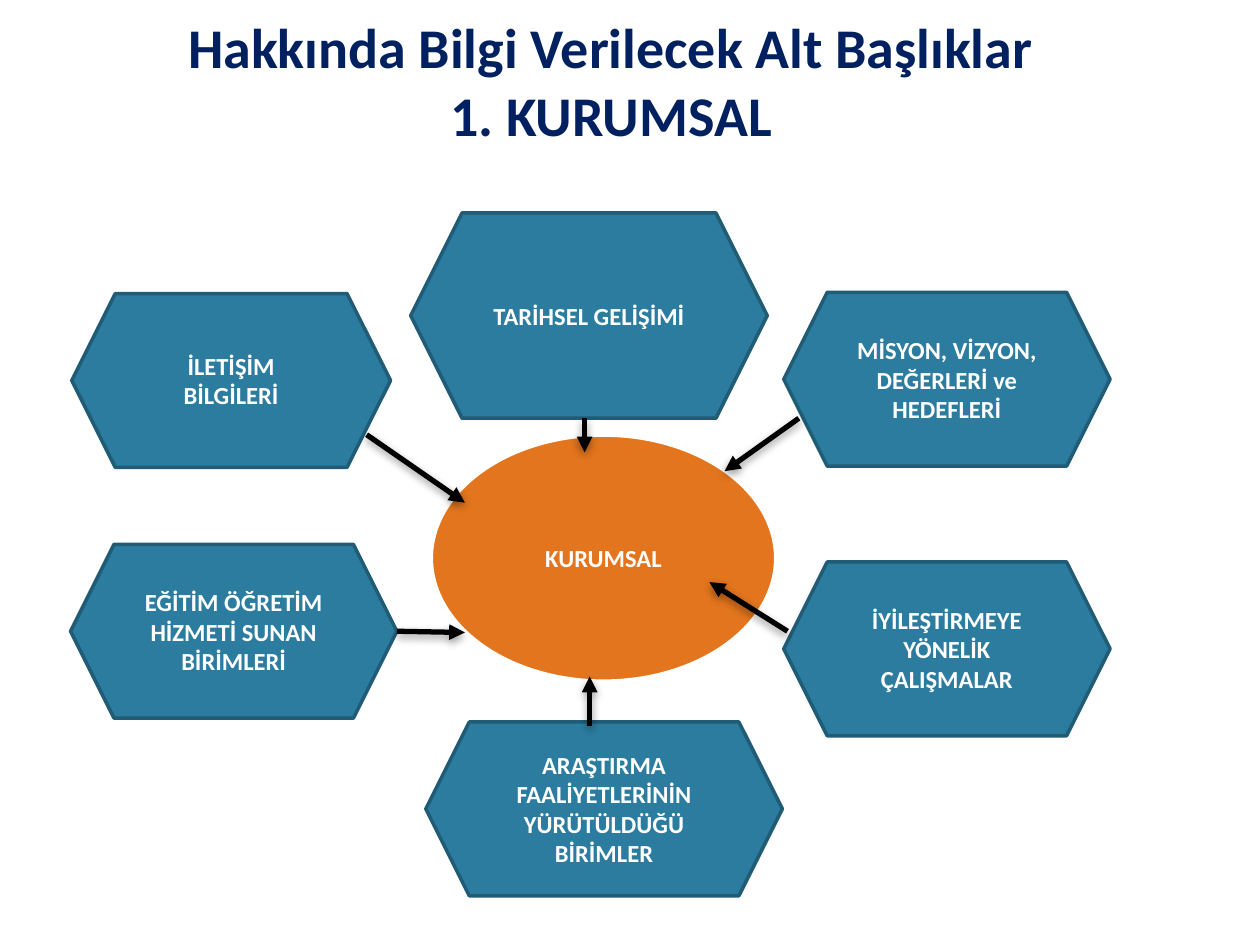
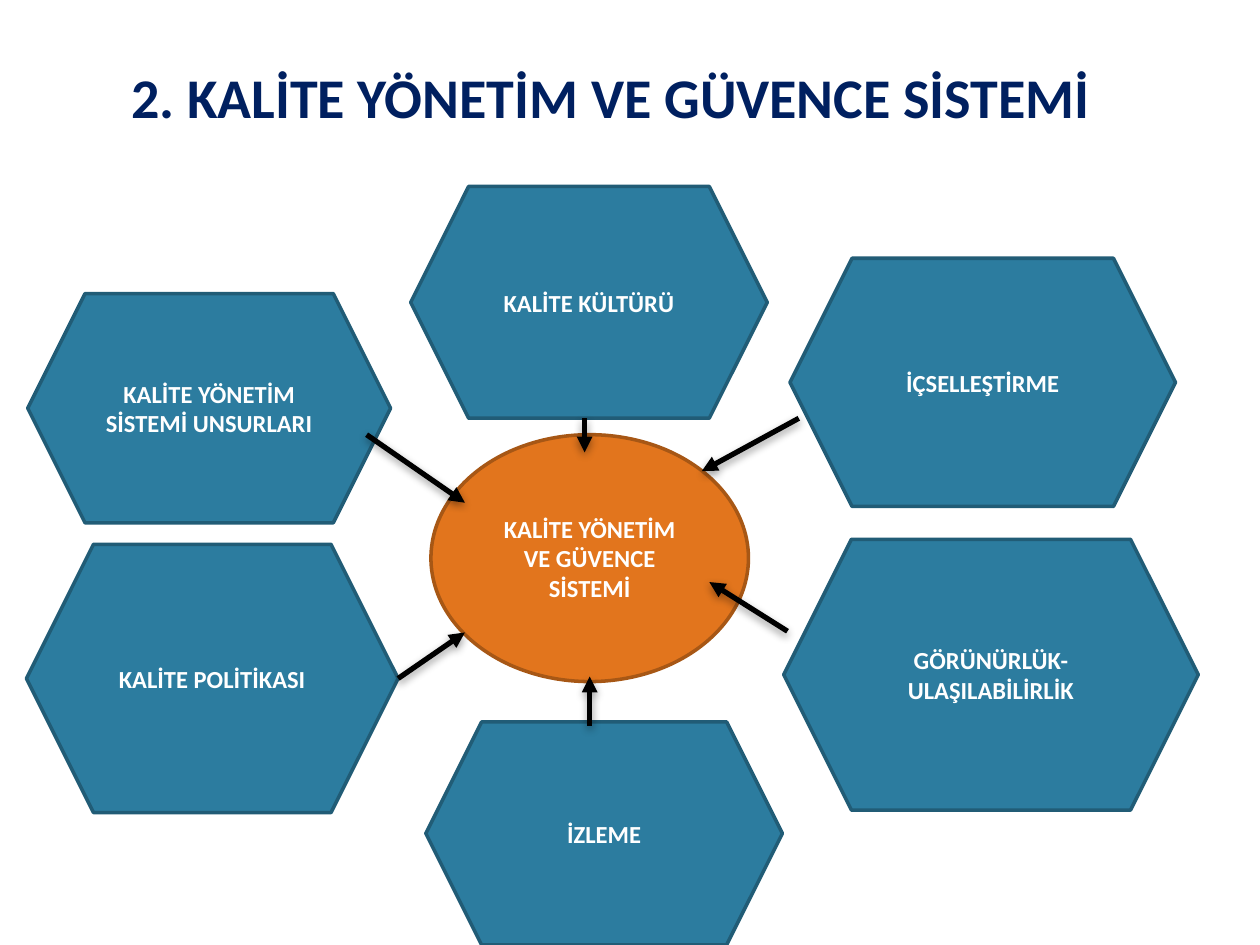
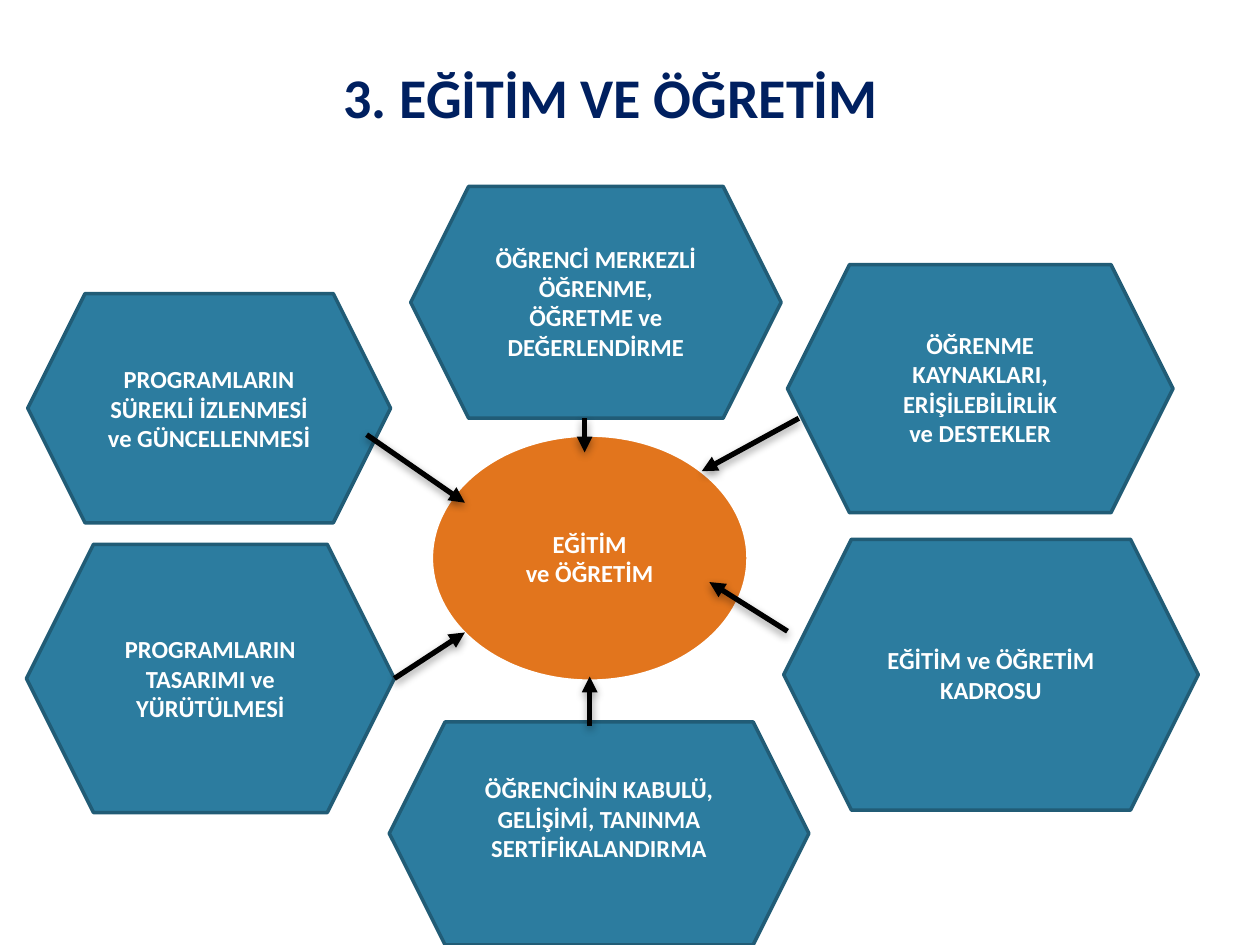
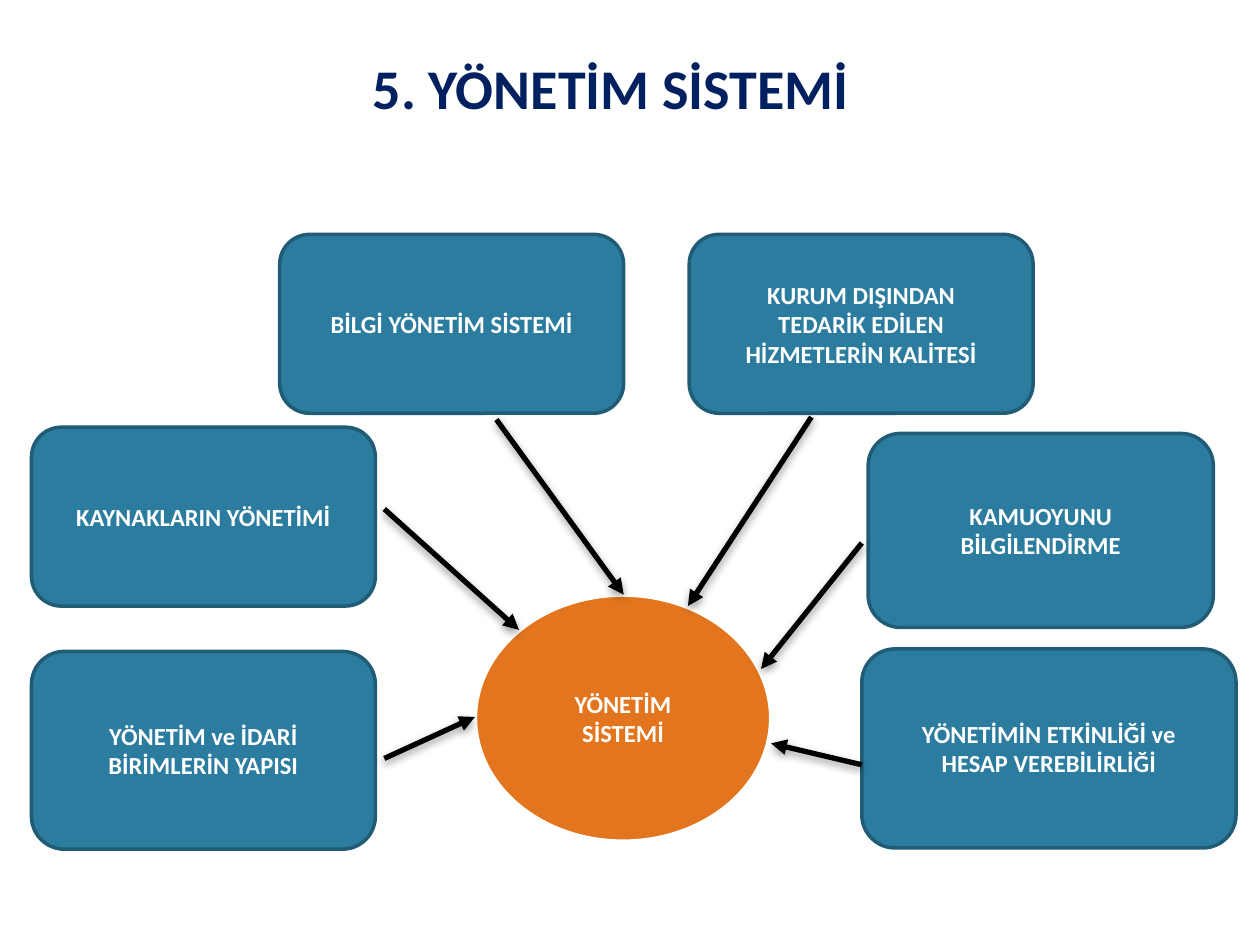
import pptx
import pptx.dml.color
import pptx.enum.shapes
import pptx.enum.text
import pptx.oxml
import pptx.oxml.ns
import pptx.util
from lxml import etree

Inches, Pt = pptx.util.Inches, pptx.util.Pt
SHAPE = pptx.enum.shapes.MSO_SHAPE
MIDDLE = pptx.enum.text.MSO_ANCHOR.MIDDLE
BOTTOM = pptx.enum.text.MSO_ANCHOR.BOTTOM
FONT = "Calibri"
COLORS = {"title": "002060", "topic": "2C7C9F", "topic_line": "215C76",
          "hub": "E2751D", "hub_line": "A75715", "white": "FFFFFF", "arrow": "000000"}

# Arrows shared by the hexagon slides: (from, to)
HEXAGON_ARROWS = [
    ((2.91, 3.45), (3.69, 3.99)),
    ((4.64, 3.32), (4.64, 3.59)),
    ((6.25, 5.01), (5.63, 4.62)),
    ((4.68, 5.76), (4.68, 5.37)),
]
LOWER_LEFT_TIP = (3.69, 5.02)
UPPER_RIGHT_START = (6.34, 3.32)

# Boxes are (left, top, width, height); the first topic is the lower left one
SLIDES = [
    {
        "title": "Hakkında Bilgi Verilecek Alt Başlıklar\v1. KURUMSAL",
        "title_box": (0.35, 0.19, 9, 1.03),
        "hub": ("KURUMSAL", (3.42, 3.45, 2.74, 1.96)),
        "upper_right_tip": (5.75, 3.74),
        "topics": [
            ("EĞİTİM ÖĞRETİM HİZMETİ SUNAN BİRİMLERİ", (0.56, 4.32, 2.59, 1.38)),
            ("ARAŞTIRMA FAALİYETLERİNİN YÜRÜTÜLDÜĞÜ BİRİMLER", (3.38, 5.73, 2.83, 1.38)),
            ("İLETİŞİM BİLGİLERİ", (0.57, 2.33, 2.53, 1.38)),
            ("TARİHSEL GELİŞİMİ", (3.26, 1.69, 2.83, 1.63)),
            ("MİSYON, VİZYON, DEĞERLERİ ve HEDEFLERİ", (6.22, 2.32, 2.59, 1.38)),
            ("İYİLEŞTİRMEYE YÖNELİK ÇALIŞMALAR", (6.22, 4.46, 2.59, 1.38)),
        ],
    },
    {
        "title": "2. KALİTE YÖNETİM VE GÜVENCE SİSTEMİ",
        "title_box": (0.35, 0.01, 9, 1.61),
        "title_inset": 0.59,
        "hub": ("KALİTE YÖNETİM VE GÜVENCE SİSTEMİ", (3.42, 3.45, 2.52, 1.96)),
        "hub_line": ("hub_line", 2),
        "upper_right_tip": (5.57, 3.74),
        "topics": [
            ("KALİTE POLİTİKASI", (0.21, 4.32, 2.95, 2.13)),
            ("İZLEME", (3.38, 5.73, 2.83, 1.77)),
            ("KALİTE YÖNETİM SİSTEMİ UNSURLARI", (0.22, 2.33, 2.88, 1.82)),
            ("KALİTE KÜLTÜRÜ", (3.26, 1.48, 2.83, 1.84)),
            ("İÇSELLEŞTİRME", (6.27, 2.05, 3.06, 1.97)),
            ("GÖRÜNÜRLÜK-ULAŞILABİLİRLİK", (6.22, 4.28, 3.29, 2.15)),
        ],
    },
    {
        "title": "3. EĞİTİM VE ÖĞRETİM",
        "title_box": (0.35, 0.01, 9, 1.61),
        "title_inset": 0.59,
        "hub": ("EĞİTİM\nve ÖĞRETİM", (3.42, 3.45, 2.52, 1.96)),
        "upper_right_tip": (5.57, 3.74),
        "topics": [
            ("PROGRAMLARIN TASARIMI ve YÜRÜTÜLMESİ", (0.21, 4.32, 2.92, 2.13)),
            ("ÖĞRENCİNİN KABULÜ, GELİŞİMİ, TANINMA SERTİFİKALANDIRMA",
             (3.09, 5.73, 3.33, 1.77), 0.34),
            ("PROGRAMLARIN SÜREKLİ İZLENMESİ\nve GÜNCELLENMESİ", (0.22, 2.33, 2.88, 1.82)),
            ("ÖĞRENCİ MERKEZLİ ÖĞRENME, ÖĞRETME ve DEĞERLENDİRME", (3.26, 1.48, 2.94, 1.84)),
            ("ÖĞRENME KAYNAKLARI, ERİŞİLEBİLİRLİK\nve DESTEKLER", (6.25, 2.1, 3.06, 1.97)),
            ("EĞİTİM ve ÖĞRETİM KADROSU", (6.22, 4.28, 3.29, 2.15)),
        ],
    },
    {
        "title": "5. YÖNETİM SİSTEMİ",
        "title_box": (0.35, 0, 9, 1.01),
        "hub": ("YÖNETİM SİSTEMİ", (3.77, 4.72, 2.35, 1.96)),
        "topic_shape": SHAPE.ROUNDED_RECTANGLE,
        "topics": [
            ("YÖNETİM ve İDARİ BİRİMLERİN YAPISI", (0.25, 5.17, 2.73, 1.57)),
            ("KAYNAKLARIN YÖNETİMİ", (0.25, 3.39, 2.73, 1.42)),
            ("BİLGİ YÖNETİM SİSTEMİ", (2.22, 1.86, 2.73, 1.42)),
            ("KURUM DIŞINDAN TEDARİK EDİLEN HİZMETLERİN KALİTESİ", (5.47, 1.86, 2.73, 1.42)),
            ("KAMUOYUNU BİLGİLENDİRME", (6.89, 3.44, 2.74, 1.54)),
            ("YÖNETİMİN ETKİNLİĞİ ve HESAP VEREBİLİRLİĞİ", (6.84, 5.15, 2.97, 1.58)),
        ],
        "arrows": [
            ((3.05, 6.02), (3.77, 5.69)),
            ((3.05, 4.04), (4.12, 5)),
            ((3.94, 3.33), (4.95, 4.72)),
            ((6.44, 3.31), (5.46, 4.81)),
            ((6.84, 4.31), (6.04, 5.31)),
            ((6.84, 6.07), (6.12, 5.9)),
        ],
    },
]

SHADOW = f"""<a:effectLst {pptx.oxml.ns.nsdecls("a")}>
  <a:outerShdw blurRad="{Pt(5)}" dist="{Pt(2)}" dir="5400000" rotWithShape="0">
    <a:srgbClr val="{COLORS["arrow"]}"><a:alpha val="40000"/></a:srgbClr>
  </a:outerShdw>
</a:effectLst>"""


def rgb(name):
    return pptx.dml.color.RGBColor.from_string(COLORS[name])


def write(tf, text, size, color, anchor):
    tf.text = text
    tf.word_wrap = True
    tf.auto_size = pptx.enum.text.MSO_AUTO_SIZE.NONE
    tf.vertical_anchor = anchor
    for p in tf.paragraphs:
        p.alignment = pptx.enum.text.PP_ALIGN.CENTER
        p.font.name, p.font.size, p.font.bold = FONT, Pt(size), True
        p.font.color.rgb = rgb(color)


def add_title(slide, text, box, bottom_inset):
    sp = slide.shapes.title
    sp.left, sp.top, sp.width, sp.height = map(Inches, box)
    write(sp.text_frame, text, 32, "title", BOTTOM)
    sp.text_frame.margin_bottom = Inches(bottom_inset)


def add_box(slide, kind, text, box, fill, line, width, bottom_inset=0.1):
    sp = slide.shapes.add_shape(kind, *map(Inches, box))
    sp.shadow.inherit = False
    sp.fill.solid()
    sp.fill.fore_color.rgb = rgb(fill)
    sp.line.color.rgb = rgb(line)
    sp.line.width = Pt(width)
    tf = sp.text_frame
    write(tf, text, 14, "white", MIDDLE)
    tf.margin_left = tf.margin_right = Inches(0.2)
    tf.margin_top, tf.margin_bottom = Inches(0.1), Inches(bottom_inset)


def add_arrow(slide, start, end):
    line = slide.shapes.add_connector(
        pptx.enum.shapes.MSO_CONNECTOR.STRAIGHT, *map(Inches, start + end))
    line.line.color.rgb = rgb("arrow")
    line.line.width = Pt(3)
    etree.SubElement(line.line._get_or_add_ln(), pptx.oxml.ns.qn("a:tailEnd"), type="triangle")
    line._element.spPr.append(pptx.oxml.parse_xml(SHADOW))


def hexagon_arrows(page):
    left, top, width, height = page["topics"][0][1]
    lower_left = ((left + width, top + height / 2), LOWER_LEFT_TIP)
    upper_right = (UPPER_RIGHT_START, page["upper_right_tip"])
    return [lower_left, *HEXAGON_ARROWS, upper_right]


def build_slide(prs, page):
    slide = prs.slides.add_slide(prs.slide_layouts[5])
    add_title(slide, page["title"], page["title_box"], page.get("title_inset", 0.05))
    # Topics around the hub
    for text, box, *inset in page["topics"]:
        add_box(slide, page.get("topic_shape", SHAPE.HEXAGON), text, box,
                "topic", "topic_line", 2, *inset)
    # Hub and the arrows that point to it
    add_box(slide, SHAPE.OVAL, *page["hub"], "hub", *page.get("hub_line", ("white", 2.5)))
    for start, end in page.get("arrows") or hexagon_arrows(page):
        add_arrow(slide, start, end)


def main():
    prs = pptx.Presentation()
    prs.slide_width, prs.slide_height = Inches(10), Inches(7.5)
    for page in SLIDES:
        build_slide(prs, page)
    prs.save("out.pptx")


if __name__ == "__main__":
    main()
